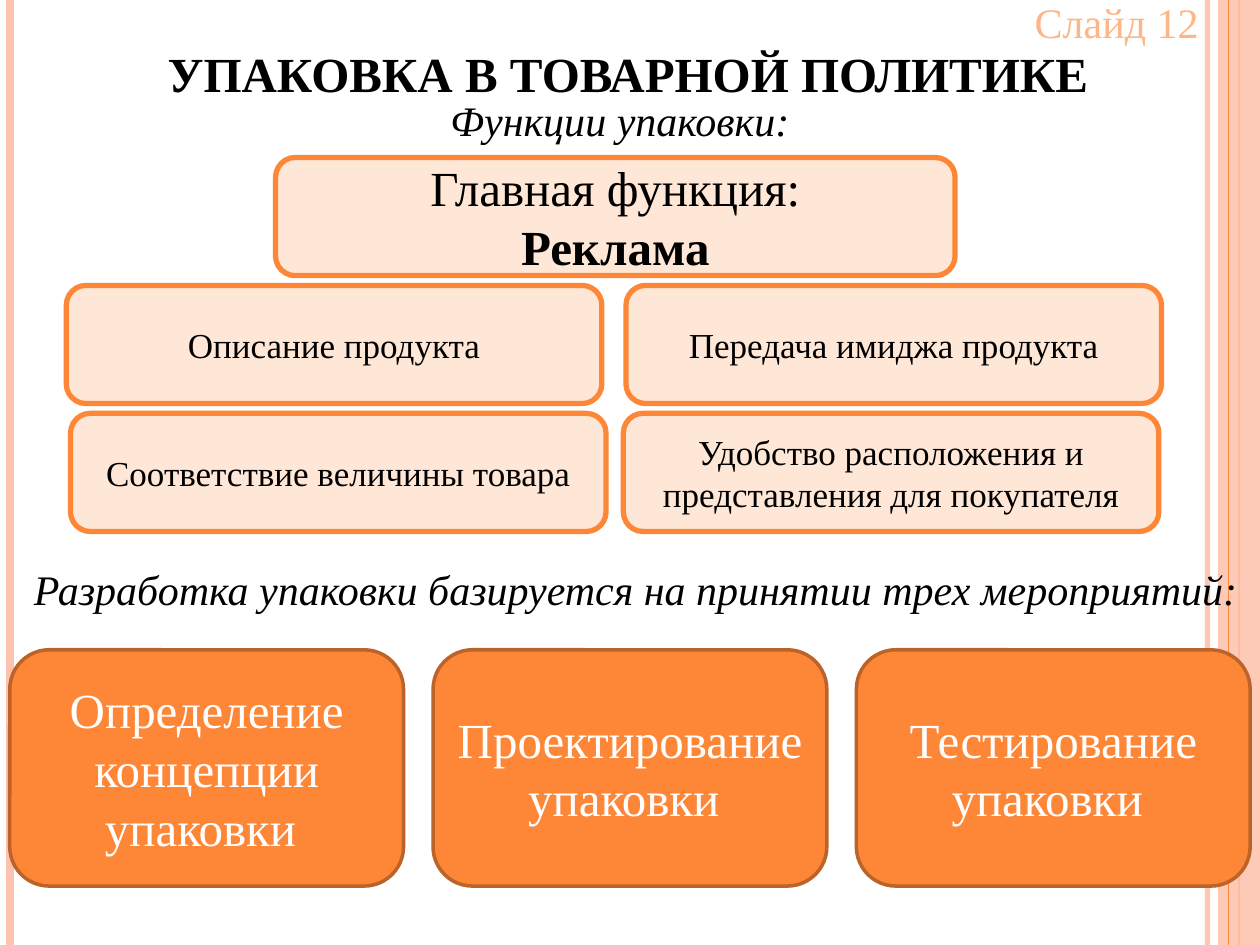
from lxml import etree
from pptx import Presentation
from pptx.dml.color import RGBColor
from pptx.enum.shapes import MSO_CONNECTOR, MSO_SHAPE
from pptx.enum.text import MSO_ANCHOR, PP_ALIGN
from pptx.oxml.ns import qn
from pptx.util import Pt

STRAIGHT = MSO_CONNECTOR.STRAIGHT
RECTANGLE, ROUNDED = MSO_SHAPE.RECTANGLE, MSO_SHAPE.ROUNDED_RECTANGLE
CENTER, RIGHT = PP_ALIGN.CENTER, PP_ALIGN.RIGHT
TOP, MIDDLE, BOTTOM = MSO_ANCHOR.TOP, MSO_ANCHOR.MIDDLE, MSO_ANCHOR.BOTTOM

BLACK = RGBColor(0x00, 0x00, 0x00)
WHITE = RGBColor(0xFF, 0xFF, 0xFF)
ORANGE = RGBColor(0xFE, 0x86, 0x37)
DARK_ORANGE = RGBColor(0xBC, 0x63, 0x29)
SOFT_ORANGE = RGBColor(0xFE, 0xB6, 0x87)
CREAM = RGBColor(0xFF, 0xE7, 0xD7)
PINK = RGBColor(0xFE, 0xC3, 0xAE)

FONT = "Times New Roman"
WIDTH, HEIGHT = 720, 540


def set_opacity(shape, percent):
    """Make the first colour of the shape partly transparent."""
    color = next(shape._element.iter(qn("a:srgbClr")))
    etree.SubElement(color, qn("a:alpha"), val=str(percent * 1000))


def write(shape, lines, anchor=MIDDLE, align=CENTER, **font_format):
    """Fill the shape with one paragraph for each (text, bold) pair."""
    frame = shape.text_frame
    frame.word_wrap = True
    frame.vertical_anchor = anchor
    for index, (text, bold) in enumerate(lines):
        para = frame.add_paragraph() if index else frame.paragraphs[0]
        para.alignment = align
        span = para.add_run()
        span.text = text
        color = font_format.get("color", BLACK)
        span.font.color.rgb = color
        values = {"name": FONT, "size": Pt(font_format["size"]), "bold": bold,
                  "italic": font_format.get("italic", False)}
        for name, value in values.items():
            setattr(span.font, name, value)


deck = Presentation()
deck.slide_width, deck.slide_height = Pt(WIDTH), Pt(HEIGHT)
page = deck.slides.add_slide(deck.slide_layouts[5])
shapes = page.shapes

# Side stripes; the pink band lies over all but the last line
for x, color, weight, opacity in [
    (690, PINK, 3, 93),
    (5.9, PINK, 4.5, 100),
    (708, ORANGE, 1.5, 100),
    (None, PINK, 0, 87),
    (702, ORANGE, 0.75, 100),
]:
    if x is None:
        stripe = shapes.add_shape(RECTANGLE, Pt(696), 0, Pt(WIDTH - 696), Pt(HEIGHT))
        stripe.shadow.inherit = False
        stripe.fill.solid()
        stripe.fill.fore_color.rgb = color
        stripe.line.fill.background()
    else:
        stripe = shapes.add_connector(STRAIGHT, Pt(x), 0, Pt(x), Pt(HEIGHT))
        stripe.line.color.rgb = color
        stripe.line.width = Pt(weight)
        etree.SubElement(stripe._element.spPr, qn("a:effectLst"))
    if opacity < 100:
        set_opacity(stripe, opacity)

title = shapes.title
title_place = {"left": 64.8, "top": 0, "width": 588, "height": 62}
for name, value in title_place.items():
    setattr(title, name, Pt(value))
write(title, [("УПАКОВКА В ТОВАРНОЙ ПОЛИТИКЕ", True)], BOTTOM, size=28)

# Captions
for text, place, align, color, italic, space_before in [
    ("Функции упаковки:", (230.4, 50.4, 247.7, 44.6), CENTER, BLACK, True, 6),
    ("Слайд 12", (556.6, -5.8, 135.4, 36.7), RIGHT, SOFT_ORANGE, False, 0),
    ("Разработка упаковки базируется на принятии трех мероприятий:",
     (11.5, 318.2, 703.4, 36.7), CENTER, BLACK, True, 0),
]:
    caption = shapes.add_textbox(*map(Pt, place))
    write(caption, [(text, False)], TOP, align, size=24, color=color, italic=italic)
    caption.text_frame.paragraphs[0].space_before = Pt(space_before)
# The last caption is nearly as wide as the page
caption.text_frame.margin_left = caption.text_frame.margin_right = 0

# Functions of packaging, then the three steps of its development
FUNCTION = {"fill": CREAM, "line": ORANGE, "weight": 3, "color": BLACK}
STEP = {"fill": ORANGE, "line": DARK_ORANGE, "weight": 2, "color": WHITE}
boxes = [
    ([("Главная функция:", False), ("Реклама", True)],
     (157.5, 90, 388.3, 67.5), 28, FUNCTION),
]
for text, left, top in [
    ("Соответствие величины товара", 40.3, 236.2),
    ("Описание продукта", 37.9, 163.1),
    ("Передача имиджа продукта", 357.7, 163.1),
    ("Удобство расположения и представления для покупателя", 356.2, 236.2),
]:
    boxes.append(([(text, False)], (left, top, 306, 67.5), 20, FUNCTION))
for column, text in enumerate([
    "Определение концепции упаковки ",
    "Проектирование упаковки ",
    "Тестирование упаковки ",
]):
    place = (5.6 + column * 241.9, 371.3, 225, 135)
    boxes.append(([(text, False)], place, 28, STEP))

for lines, place, size, look in boxes:
    box = shapes.add_shape(ROUNDED, *map(Pt, place))
    box.shadow.inherit = False
    box.fill.solid()
    box.fill.fore_color.rgb = look["fill"]
    box.line.color.rgb = look["line"]
    box.line.width = Pt(look["weight"])
    write(box, lines, size=size, color=look["color"])

deck.save("out.pptx")
